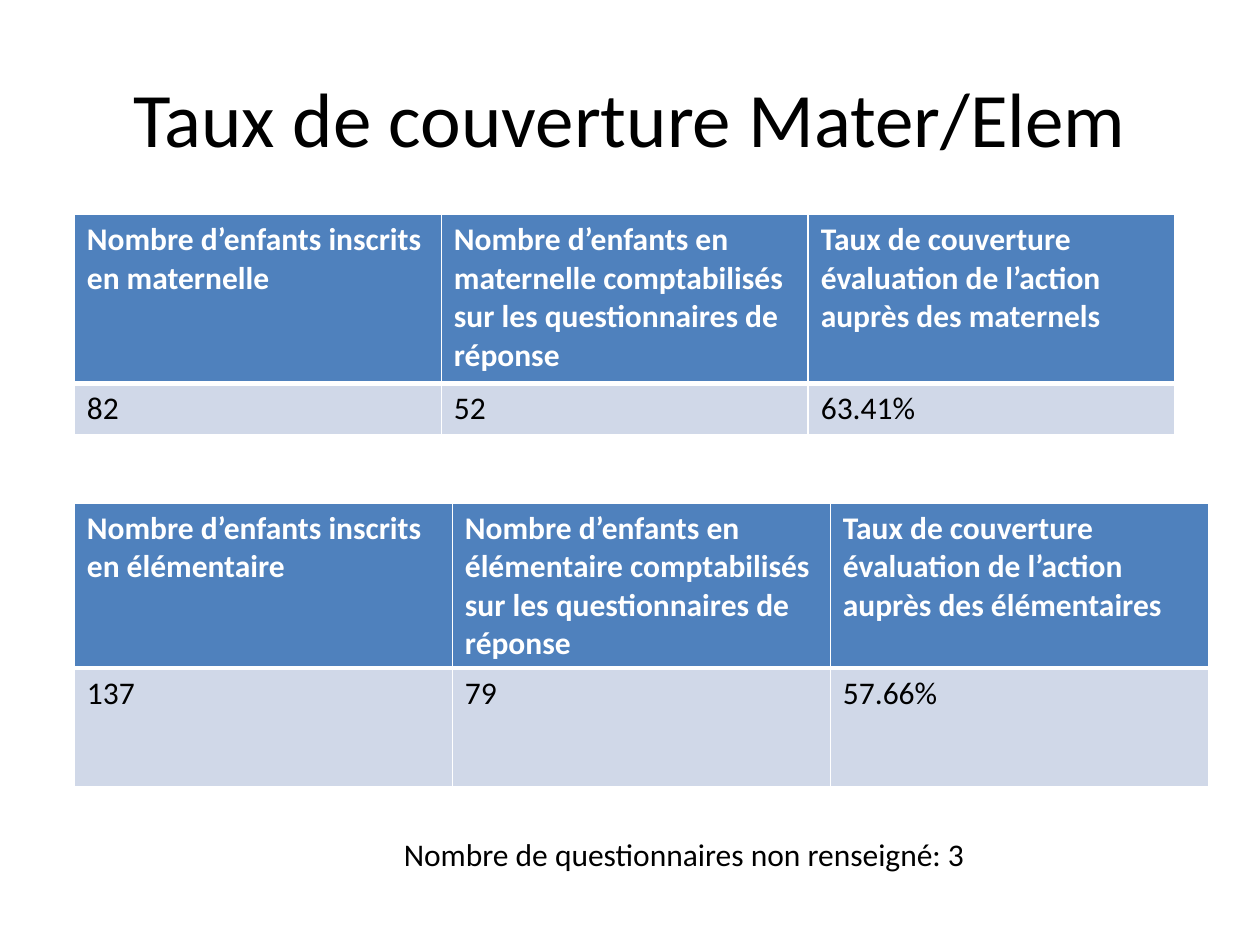
from lxml import etree
from pptx import Presentation
from pptx.dml import color
from pptx.enum import text
from pptx.oxml import ns
from pptx.util import Pt


def rgb(hex_code):
    return color.RGBColor.from_string(hex_code)


class Deck:
    font = "Calibri"
    ink, paper = "000000", "FFFFFF"
    header_fill, value_fill = "4F81BD", "D0D8E8"

    def __init__(self, width, height):
        self.presentation = Presentation()
        self.presentation.slide_width = Pt(width)
        self.presentation.slide_height = Pt(height)
        self.slide = self.presentation.slides.add_slide(self.presentation.slide_layouts[6])

    def style(self, paragraph, size, ink, bold=False):
        paragraph.font.name = self.font
        paragraph.font.size = Pt(size)
        paragraph.font.bold = bold
        paragraph.font.color.rgb = rgb(ink)

    def label(self, wording, left, top, width, height, size,
              align=text.PP_ALIGN.LEFT, anchor=text.MSO_ANCHOR.TOP):
        frame = self.slide.shapes.add_textbox(Pt(left), Pt(top), Pt(width), Pt(height)).text_frame
        frame.word_wrap = True
        frame.vertical_anchor = anchor
        frame.text = wording
        frame.paragraphs[0].alignment = align
        self.style(frame.paragraphs[0], size, self.ink)

    def borders(self, cell, **weights):
        properties = cell._tc.get_or_add_tcPr()
        for position, side in enumerate(("L", "R", "T", "B")):
            line = etree.Element(ns.qn(f"a:ln{side}"), w=str(Pt(weights.get(side, 1))))
            fill = etree.SubElement(line, ns.qn("a:solidFill"))
            etree.SubElement(fill, ns.qn("a:srgbClr"), val=self.paper)
            properties.insert(position, line)

    def table(self, headings, values, left, top, column_width, row_heights):
        grid = self.slide.shapes.add_table(
            2, len(headings), Pt(left), Pt(top),
            Pt(column_width * len(headings)), Pt(sum(row_heights))).table
        for column in grid.columns:
            column.width = Pt(column_width)
        for row, height in zip(grid.rows, row_heights):
            row.height = Pt(height)
        for index, (heading, value) in enumerate(zip(headings, values)):
            self.cell(grid.cell(0, index), heading, self.header_fill, self.paper, True, B=3)
            self.cell(grid.cell(1, index), value, self.value_fill, self.ink, False, T=3)

    def cell(self, cell, wording, fill, ink, bold, **weights):
        cell.text = wording
        cell.fill.solid()
        cell.fill.fore_color.rgb = rgb(fill)
        self.style(cell.text_frame.paragraphs[0], 18, ink, bold)
        self.borders(cell, **weights)


def headings(level, pupils):
    return (
        f"Nombre d’enfants inscrits en {level}",
        f"Nombre d’enfants en {level} comptabilisés sur les questionnaires de réponse",
        f"Taux de couverture évaluation de l’action auprès des {pupils}",
    )


def main():
    deck = Deck(720, 540)
    deck.label("Taux de couverture Mater/Elem", 36, 21.6, 648, 90, 44,
               text.PP_ALIGN.CENTER, text.MSO_ANCHOR.MIDDLE)
    deck.table(headings("maternelle", "maternels"), ("82", "52", "63.41%"),
               42.5, 122.6, 209.7, (96.5, 29.2))
    deck.table(headings("élémentaire", "élémentaires"), ("137", "79", "57.66%"),
               42.5, 287.4, 216, (94.4, 67.7))
    deck.label("Nombre de questionnaires non renseigné: 3", 223.7, 473.8, 363, 29, 18)
    deck.presentation.save("out.pptx")


if __name__ == "__main__":
    main()
